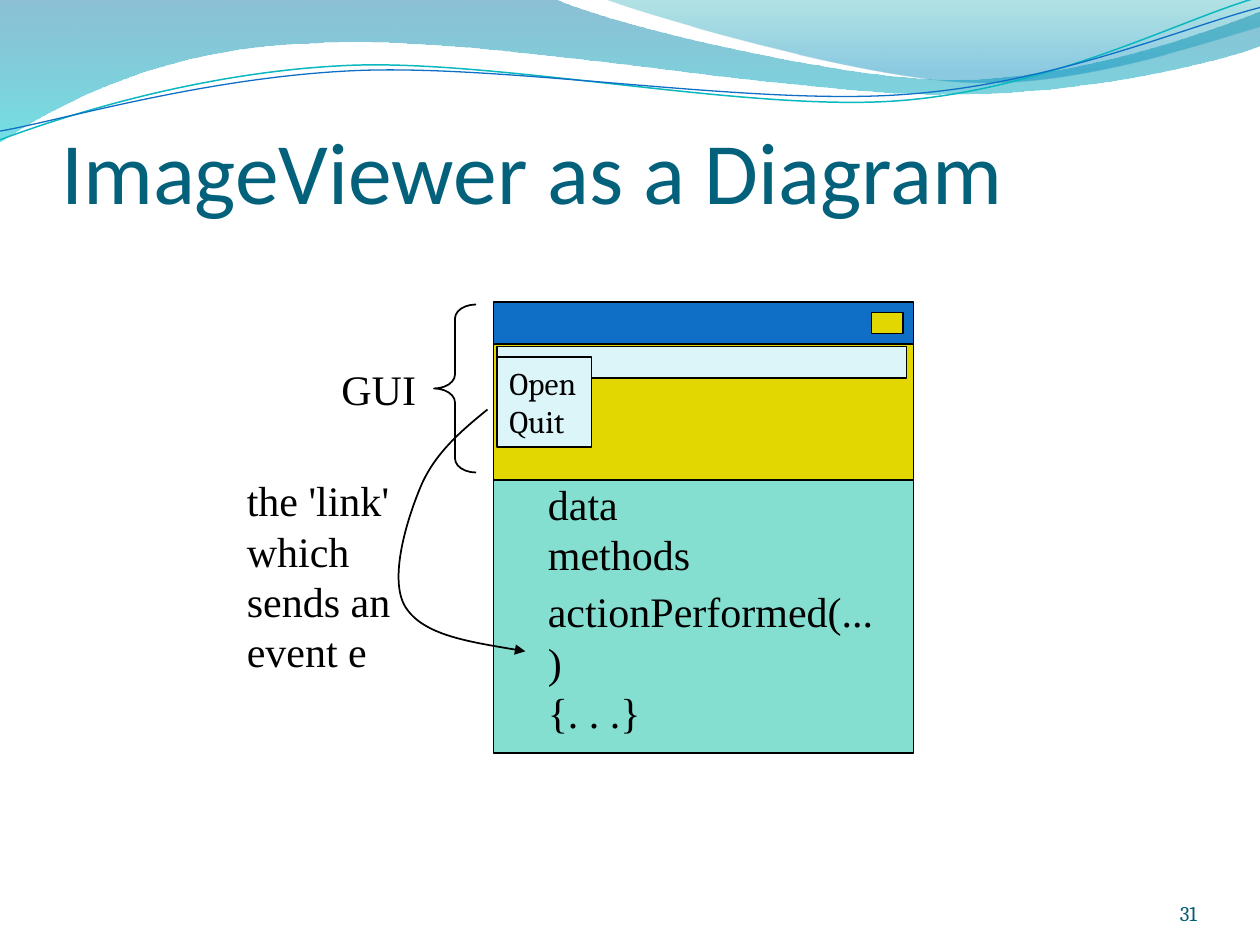
from dataclasses import dataclass
from typing import Optional

from lxml.etree import SubElement
from pptx import Presentation
from pptx.dml.color import RGBColor
from pptx.enum.shapes import MSO_SHAPE
from pptx.enum.text import MSO_ANCHOR, MSO_AUTO_SIZE, PP_ALIGN
from pptx.oxml.ns import qn
from pptx.util import Pt

COLORS = {
    "title": "04617B", "number": "045D75", "ink": "000000",
    "blue": "0F6FC6", "yellow": "E2D700", "mint": "85DFD0", "ice": "DBF5F9",
    "teal line": "0AB8BF", "deep blue": "0074A1", "cyan": "00C6CF",
    "deep teal": "00A1A9", "sky": "008BBF",
}
WINDOW_LEFT, WINDOW_WIDTH = 282, 240

Point = tuple[float, float]


@dataclass
class Curve:
    """A start point, then segments of one point (line) or three (Bézier)."""
    start: Point
    segments: list[tuple[Point, ...]]


@dataclass
class Stop:
    position: float
    color: str
    opacity: int


@dataclass
class Wave:
    curve: Curve
    stops: tuple[Stop, Stop]


@dataclass
class Stroke:
    curve: Curve
    color: str
    width: float


@dataclass
class Panel:
    left: float
    top: float
    width: float
    height: float
    fill: Optional[str]
    kind: MSO_SHAPE = MSO_SHAPE.RECTANGLE


@dataclass
class Label:
    text: str
    left: float
    top: float
    width: float
    height: float


WAVES = [
    Wave(Curve((-0.7, 0), [
        ((316.8, -0.7),),
        ((342.7, 12.2), (478.1, 45.4), (545.8, 45.4)),
        ((614.2, 45.4), (689.8, 18.7), (720, 6.5)),
        ((720.7, 25.9),),
        ((707.8, 31.7), (626.4, 54.7), (537.1, 54)),
        ((447.8, 54), (275, 20.2), (185, 24.5)),
        ((92.9, 25.9), (33.1, 59.8), (-0.7, 81.4)),
    ]), (Stop(0, "deep blue", 45), Stop(1, "cyan", 55))),
    Wave(Curve((344.9, -0.7), [
        ((366.5, 7.9), (491, 44.6), (553.7, 46.8)),
        ((616.3, 49.7), (691.9, 23), (720, 15.1)),
        ((720, 0),),
    ]), (Stop(0, "deep teal", 30), Stop(0.8, "sky", 45))),
]
STROKES = [
    Stroke(Curve((0, 79.9), [
        ((34.6, 67), (113.8, 41), (199.4, 37.4)),
        ((284.4, 33.8), (427, 64.1), (513.4, 57.6)),
        ((599.8, 51.1), (675.4, 10.8), (718.6, -1.4)),
    ]), "teal line", 0.85),
    Stroke(Curve((0, 74.9), [
        ((33.8, 69.1), (118.1, 43.9), (203.8, 40.3)),
        ((290.2, 36.7), (429.8, 60.5), (516.2, 54)),
        ((601.9, 48.2), (677.5, 15.1), (720, 4.3)),
    ]), "blue", 0.75),
]
EVENT_LINK = Stroke(Curve((278.6, 234), [
    ((263.5, 246.2), (248.4, 259.2), (240.5, 277.9)),
    ((232.6, 296.6), (221.8, 331.2), (231.8, 347)),
    ((241.9, 362.9), (270.7, 367.2), (300.2, 372.2)),
]), "ink", 1)
PANELS = [
    Panel(WINDOW_LEFT, 196.6, WINDOW_WIDTH, 77.8, "yellow"),
    Panel(WINDOW_LEFT, 274.4, WINDOW_WIDTH, 156, "mint"),
    Panel(284, 198, 234, 18, "ice"),
    Panel(WINDOW_LEFT, 172.6, WINDOW_WIDTH, 24, "blue"),
    Panel(498, 178.6, 18, 12, "yellow"),
    Panel(248, 174, 24, 96, None, MSO_SHAPE.LEFT_BRACE),
]
MENU = Panel(284, 204, 54, 51.6, "ice")
LABELS = [
    Label("GUI", 188, 204, 57.6, 36),
    Label("data\nmethods", 306, 269.8, 96, 65),
    Label("the 'link'\nwhich\nsends an\nevent e", 134, 267.7, 96.5, 122.4),
    Label("actionPerformed(...)\v{. . .}", 306, 331.2, 208, 65),
]


def rgb(name: str) -> RGBColor:
    return RGBColor.from_string(COLORS[name])


def add_curve(page, curve: Curve, close: bool):
    """Draw straight lines through all points, then join threes into Béziers."""
    builder = page.shapes.build_freeform(Pt(curve.start[0]), Pt(curve.start[1]))
    points = [(Pt(x), Pt(y)) for segment in curve.segments for x, y in segment]
    builder.add_line_segments(points, close=close)
    shape = builder.convert_to_shape()
    shape.shadow.inherit = False
    lines = iter(list(shape.element.spPr.iter(qn("a:lnTo"))))
    for segment in curve.segments:
        first, *others = [next(lines) for _ in segment]
        if others:
            bezier = first.makeelement(qn("a:cubicBezTo"))
            first.addprevious(bezier)
            for line in (first, *others):
                bezier.append(line[0])
                line.getparent().remove(line)
    return shape


def add_wave(page, wave: Wave) -> None:
    shape = add_curve(page, wave.curve, close=True)
    shape.line.fill.background()
    shape.fill.gradient()
    shape.fill.gradient_angle = 270
    for target, stop in zip(shape.fill.gradient_stops, wave.stops):
        target.position = stop.position
        target.color.rgb = rgb(stop.color)
    color_tags = shape.element.spPr.iter(qn("a:srgbClr"))
    for color_tag, stop in zip(list(color_tags), wave.stops):
        SubElement(color_tag, qn("a:alpha"), val=str(stop.opacity * 1000))


def add_stroke(page, stroke: Stroke):
    shape = add_curve(page, stroke.curve, close=False)
    shape.fill.background()
    shape.line.color.rgb = rgb(stroke.color)
    shape.line.width = Pt(stroke.width)
    return shape


def add_panel(page, panel: Panel):
    shape = page.shapes.add_shape(panel.kind, Pt(panel.left), Pt(panel.top),
                                  Pt(panel.width), Pt(panel.height))
    shape.shadow.inherit = False
    if panel.fill:
        shape.fill.solid()
        shape.fill.fore_color.rgb = rgb(panel.fill)
    else:
        shape.fill.background()
    shape.line.color.rgb = rgb("ink")
    shape.line.width = Pt(1)
    return shape


def write(frame, text: str, font: str, size: float, color: str = "ink",
          align: PP_ALIGN = PP_ALIGN.LEFT) -> None:
    frame.text = text
    for para in frame.paragraphs:
        para.alignment = align
        for span in para.runs:
            span.font.name, span.font.size = font, Pt(size)
            span.font.color.rgb = rgb(color)


def fit_to_text(frame) -> None:
    frame.word_wrap = False
    frame.auto_size = MSO_AUTO_SIZE.SHAPE_TO_FIT_TEXT


def set_margins(frame, left: float, top: float, right: float, bottom: float) -> None:
    frame.margin_left, frame.margin_top = Pt(left), Pt(top)
    frame.margin_right, frame.margin_bottom = Pt(right), Pt(bottom)


def add_label(page, label: Label) -> None:
    box = page.shapes.add_textbox(Pt(label.left), Pt(label.top),
                                  Pt(label.width), Pt(label.height))
    write(box.text_frame, label.text, "Times New Roman", 24)
    fit_to_text(box.text_frame)


def add_title(page) -> None:
    title = page.shapes.title
    title.left, title.top, title.width, title.height = Pt(35), Pt(37), Pt(648), Pt(90)
    frame = title.text_frame
    write(frame, "ImageViewer as a Diagram", "Calibri", 50, "title")
    set_margins(frame, 0, 3.6, 0, 0)
    frame.vertical_anchor = MSO_ANCHOR.BOTTOM
    frame.auto_size = MSO_AUTO_SIZE.NONE


def add_page_number(page) -> None:
    box = page.shapes.add_textbox(Pt(624), Pt(500.4), Pt(60), Pt(28.8))
    frame = box.text_frame
    write(frame, "31", "Cambria", 12, "number", PP_ALIGN.RIGHT)
    set_margins(frame, 0, 0, 0, 0)
    frame.word_wrap = True
    frame.vertical_anchor = MSO_ANCHOR.BOTTOM


def main() -> None:
    deck = Presentation()
    deck.slide_width, deck.slide_height = Pt(720), Pt(540)
    page = deck.slides.add_slide(deck.slide_layouts[5])

    for wave in WAVES:
        add_wave(page, wave)
    for stroke in STROKES:
        add_stroke(page, stroke)
    add_title(page)
    for panel in PANELS:
        shape = add_panel(page, panel)
        if panel.kind == MSO_SHAPE.LEFT_BRACE:
            shape.adjustments[0] = 0.333
    for label in LABELS:
        add_label(page, label)

    menu = add_panel(page, MENU).text_frame
    write(menu, "Open\nQuit", "Cambria", 18)
    menu.vertical_anchor = MSO_ANCHOR.MIDDLE
    fit_to_text(menu)

    link = add_stroke(page, EVENT_LINK)
    SubElement(link.element.spPr.find(qn("a:ln")), qn("a:tailEnd"), type="triangle")
    add_page_number(page)

    deck.save("out.pptx")


if __name__ == "__main__":
    main()
